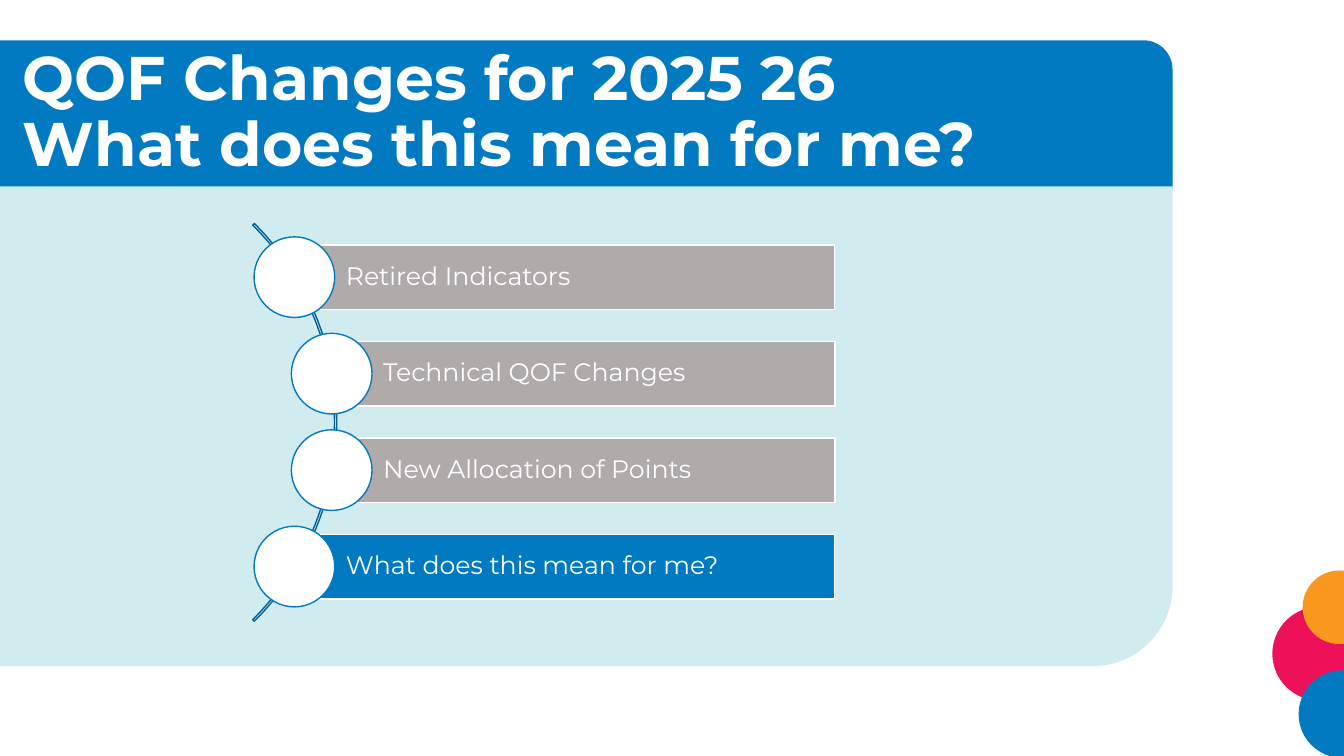
"""Build the QOF agenda slide with its curved list of topics."""
from pptx import Presentation
from pptx.dml.color import RGBColor
from pptx.enum.shapes import MSO_SHAPE
from pptx.enum.text import MSO_ANCHOR, PP_ALIGN
from pptx.util import Inches, Pt

RECTANGLE = MSO_SHAPE.RECTANGLE
ROUNDED = MSO_SHAPE.ROUNDED_RECTANGLE
ONE_ROUND_CORNER = MSO_SHAPE.ROUND_1_RECTANGLE
OVAL = MSO_SHAPE.OVAL
ARC = MSO_SHAPE.BLOCK_ARC
MIDDLE = MSO_ANCHOR.MIDDLE
LEFT = PP_ALIGN.LEFT

WHITE = RGBColor(0xFF, 0xFF, 0xFF)
BLUE = RGBColor(0x01, 0x7A, 0xC2)
DARK_BLUE = RGBColor(0x01, 0x62, 0x9B)
PALE_BLUE = RGBColor(0xD0, 0xEC, 0xEF)
GREY = RGBColor(0xAF, 0xAB, 0xAB)
PINK = RGBColor(0xEE, 0x10, 0x59)
ORANGE = RGBColor(0xF8, 0x98, 0x1D)
FONT = "Montserrat"

TITLE_LINES = ["QOF Changes for 2025 26", "What does this mean for me?"]
TOPICS = [
    ("Retired Indicators", 2.92, GREY),
    ("Technical QOF Changes", 3.29, GREY),
    ("New Allocation of Points", 3.29, GREY),
    ("What does this mean for me?", 2.92, BLUE),
]
CORNER_CIRCLES = [
    (12.62, 6.02, 0.93, PINK),
    (12.88, 6.65, 0.87, BLUE),
    (12.92, 5.66, 0.73, ORANGE),
]
BAR_TOP, BAR_PITCH, BAR_HEIGHT, BAR_RIGHT = 2.43, 0.957, 0.64, 8.28
MARKER_SIZE = 0.8


def add_shape(page, kind, left, top, width, height, fill=None, line=None):
    shape = page.shapes.add_shape(
        kind, Inches(left), Inches(top), Inches(width), Inches(height))
    shape.shadow.inherit = False
    if fill is None:
        shape.fill.background()
    else:
        shape.fill.solid()
        shape.fill.fore_color.rgb = fill
    if line is None:
        shape.line.fill.background()
    else:
        shape.line.color.rgb = line
        shape.line.width = Pt(1)
    return shape


def write_lines(box, lines, size, bold=False):
    frame = box.text_frame
    frame.word_wrap = True
    frame.vertical_anchor = MIDDLE
    para = frame.paragraphs[0]
    para.alignment = LEFT
    para.line_spacing = 0.9
    for index, line in enumerate(lines):
        if index:
            para.add_line_break()
        span = para.add_run()
        span.text = line
        span.font.name = FONT
        span.font.size = Pt(size)
        span.font.bold = bold
        span.font.color.rgb = WHITE


def add_frame(page):
    add_shape(page, ROUNDED, -0.4, 0.4, 12.03, 1.73, BLUE)
    panel = add_shape(page, ONE_ROUND_CORNER, -0.11, 1.85, 11.74, 4.76, PALE_BLUE)
    panel.element.spPr.xfrm.set("flipV", "1")
    for left, top, size, color in CORNER_CIRCLES:
        add_shape(page, OVAL, left, top, size, size, color)
    title = page.shapes.add_textbox(
        Inches(0.13), Inches(0.4), Inches(11.5), Inches(1.45))
    write_lines(title, TITLE_LINES, 44, bold=True)


def add_topics(page):
    arc = add_shape(page, ARC, -2.24, 1.4, 5.58, 5.58, line=DARK_BLUE)
    for index, value in enumerate((189, 27, 0.004)):
        arc.adjustments[index] = value
    for index, (topic, left, color) in enumerate(TOPICS):
        top = BAR_TOP + index * BAR_PITCH
        bar = add_shape(page, RECTANGLE, left, top, BAR_RIGHT - left,
                        BAR_HEIGHT, color, WHITE)
        bar.text_frame.margin_left = Inches(0.51)
        bar.text_frame.margin_right = Inches(0.05)
        write_lines(bar, [topic], 18)
        add_shape(page, OVAL, left - MARKER_SIZE / 2,
                  top + (BAR_HEIGHT - MARKER_SIZE) / 2,
                  MARKER_SIZE, MARKER_SIZE, WHITE, BLUE)


def main():
    deck = Presentation()
    deck.slide_width = Inches(13.33)
    deck.slide_height = Inches(7.5)
    page = deck.slides.add_slide(deck.slide_layouts[6])
    add_frame(page)
    add_topics(page)
    deck.save("out.pptx")


if __name__ == "__main__":
    main()
